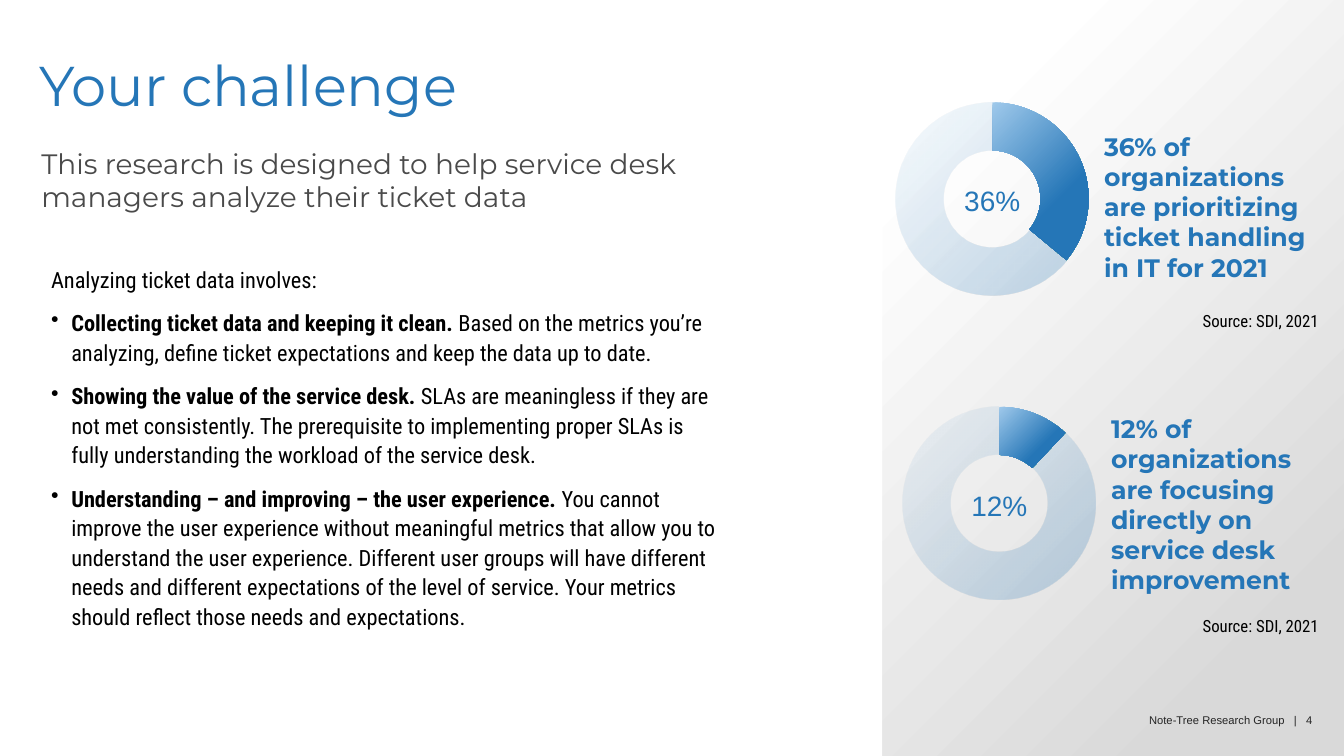
from collections import namedtuple

from lxml.etree import SubElement
from pptx import Presentation
from pptx.chart.data import CategoryChartData
from pptx.dml.color import RGBColor
from pptx.enum.chart import XL_CHART_TYPE as ChartType
from pptx.enum.shapes import MSO_SHAPE as Shape
from pptx.enum.text import MSO_ANCHOR as Anchor, PP_ALIGN as Align
from pptx.oxml import parse_xml
from pptx.oxml.ns import nsdecls, qn
from pptx.util import Inches, Pt

WIDTH, HEIGHT = Inches(13.34), Inches(7.5)
COLUMN, ROW = WIDTH / 100, HEIGHT / 100

BLUE = RGBColor(0x25, 0x76, 0xB7)
LIGHT_BLUE = RGBColor(0x9F, 0xC9, 0xEB)
SLATE = RGBColor(0x4A, 0x4A, 0x4A)
CHARCOAL = RGBColor(0x24, 0x24, 0x24)
BLACK = RGBColor(0, 0, 0)
WHITE = RGBColor(0xFF, 0xFF, 0xFF)
GREY = RGBColor(0xD9, 0xD9, 0xD9)

HEADING, BODY, PLAIN = "Montserrat", "Roboto Condensed", "Arial"

Box = namedtuple("Box", "left top width height")

TASKS = [
    ("Collecting ticket data and keeping it clean. ",
     "Based on the metrics you’re analyzing, define ticket expectations and "
     "keep the data up to date."),
    ("Showing the value of the service desk. ",
     "SLAs are meaningless if they are not met consistently. The prerequisite to "
     "implementing proper SLAs is fully understanding the workload of the service desk."),
    ("Understanding – and improving – the user experience. ",
     "You cannot improve the user experience without meaningful metrics that allow you "
     "to understand the user experience. Different user groups will have different needs "
     "and different expectations of the level of service. Your metrics should reflect "
     "those needs and expectations."),
]

STATS = [
    (Box(65.67, 10.4, 33.21, 34), 36, 1.2,
     "36% of organizations are prioritizing ticket handling in IT for 2021"),
    (Box(66.19, 50.67, 32.69, 34), 12, 0.27,
     "12% of organizations are focusing directly on service desk improvement"),
]


def place(box):
    """Turn a box in grid columns and rows into slide lengths."""
    return (round(box.left * COLUMN), round(box.top * ROW),
            round(box.width * COLUMN), round(box.height * ROW))


def add_frame(page, box, inset=0, anchor=Anchor.TOP):
    """Add a wrapping text box and return its text frame."""
    frame = page.shapes.add_textbox(*place(box)).text_frame
    frame.word_wrap = True
    frame.vertical_anchor = anchor
    frame.margin_left = frame.margin_right = Inches(inset)
    frame.margin_top = frame.margin_bottom = 0
    return frame


def style(para, name, size, color, bold=None, align=Align.LEFT, spacing=None):
    """Set the font, alignment and line spacing of a paragraph."""
    para.alignment = align
    para.line_spacing = spacing
    font = para.font
    font.name, font.size, font.bold = name, Pt(size), bold
    font.color.rgb = color


def add_line(page, box, text, *look, inset=0, anchor=Anchor.TOP, **options):
    """Add a text box with one styled paragraph."""
    para = add_frame(page, box, inset, anchor).paragraphs[0]
    para.text = text
    style(para, *look, **options)


def fill_gradient(fill, *stops):
    """Fill with a two-stop gradient from top left to bottom right."""
    fill.gradient()
    fill.gradient_angle = 315
    for stop, (position, color) in zip(fill.gradient_stops, stops):
        stop.position = position
        stop.color.rgb = color


def add_panel(page, box):
    """Draw the shaded panel behind the statistics."""
    panel = page.shapes.add_shape(Shape.RECTANGLE, *place(box))
    panel.shadow.inherit = False
    panel.line.fill.background()
    fill_gradient(panel.fill, (0.15, WHITE), (0.85, GREY))


def add_heading(page, box):
    """Write the title and the subtitle below it."""
    add_line(page, Box(box.left, box.top, 39.73, 10), "Your challenge",
             HEADING, 40, BLUE, spacing=0.9)
    add_line(page, Box(box.left + 0.15, box.top + 11.6, box.width, 9.6),
             "This research is designed to help service desk managers analyze "
             "their ticket data", HEADING, 20, SLATE, spacing=Pt(24))


def add_tasks(page, box):
    """Write the introduction and its bulleted list."""
    frame = add_frame(page, box, inset=0.1)
    intro = frame.paragraphs[0]
    intro.text = "Analyzing ticket data involves:"
    style(intro, BODY, 16, BLACK, spacing=1.1)
    for lead, detail in TASKS:
        para = frame.add_paragraph()
        for text, bold in ((lead, True), (detail, False)):
            span = para.add_run()
            span.text, span.font.bold = text, bold
        properties = para._p.get_or_add_pPr()
        properties.set("marL", str(Inches(0.2)))
        properties.set("indent", str(-Inches(0.2)))
        SubElement(properties, qn("a:buChar"), char="•")
        style(para, BODY, 16, BLACK, spacing=1.1)
        para.space_before = Pt(10)


def add_ring(page, box, percent):
    """Draw a doughnut chart of a share and its remainder."""
    data = CategoryChartData()
    data.categories = ["1", "2"]
    data.add_series("Series 1", (percent, 100 - percent))
    chart = page.shapes.add_chart(ChartType.DOUGHNUT, *place(box), data).chart
    chart.has_legend = chart.has_title = False
    chart.font.name, chart.font.size = BODY, Pt(10)
    chart.font.color.rgb = SLATE
    plot = chart.plots[0]
    plot.has_data_labels = False
    points = plot.series[0].points
    fill_gradient(points[0].format.fill, (0, LIGHT_BLUE), (0.65, BLUE))
    fill_gradient(points[1].format.fill, (0, BLUE), (0.99, BLUE))
    for point in (points[0], points[1]):
        point.format.line.fill.background()
    space = chart._chartSpace
    for color, alpha in zip(space.xpath(".//c:dPt[2]//a:gs/a:srgbClr"), (3, 26)):
        SubElement(color, qn("a:alpha"), val=str(alpha * 1000))
    space.xpath(".//c:holeSize")[0].set("val", "60")
    area = space.xpath(".//c:plotArea")[0]
    for layout in area.findall(qn("c:layout")):
        area.remove(layout)
    parts = (("x", 0.06), ("y", 0.1), ("w", 0.88), ("h", 0.81))
    sizes = "".join(f'<c:{side} val="{share}"/>' for side, share in parts)
    area.insert(0, parse_xml(
        f'<c:layout {nsdecls("c")}><c:manualLayout><c:layoutTarget val="inner"/>'
        f'<c:xMode val="edge"/><c:yMode val="edge"/>{sizes}</c:manualLayout></c:layout>'))


def add_stat(page, box, percent, shift, claim):
    """Place a ring with its percentage, claim and source."""
    ring = Box(box.left, box.top, 16.34, 31.47)
    add_ring(page, ring, percent)
    add_line(page, Box(box.left + 2.32, box.top + 13.93, 11.69, 4.53), f"{percent}%",
             PLAIN, 20, BLUE, align=Align.CENTER)
    add_line(page, Box(box.left + 15.74, box.top + shift, 16.87, ring.height), claim,
             HEADING, 18, BLUE, bold=True, inset=0.1, anchor=Anchor.MIDDLE)
    add_line(page, Box(box.left + box.width - 13.57, box.top + box.height - 4.13, 13.57, 4.13),
             "Source: SDI, 2021", BODY, 12, BLACK, align=Align.RIGHT, spacing=1.1,
             inset=0.1, anchor=Anchor.MIDDLE)


def add_footer(page, box):
    """Write the publisher and the page number."""
    add_line(page, box, "Note-Tree Research Group   |   4", PLAIN, 8, CHARCOAL,
             align=Align.RIGHT, spacing=1.1)


def main():
    """Build the slide and save the deck."""
    deck = Presentation()
    deck.slide_width, deck.slide_height = WIDTH, HEIGHT
    page = deck.slides.add_slide(deck.slide_layouts[6])
    add_panel(page, Box(65.67, 0, 34.33, 100))
    add_heading(page, Box(2.92, 7.73, 56.22, 21.2))
    add_tasks(page, Box(3.07, 34.8, 51.2, 54.4))
    for stat in STATS:
        add_stat(page, *stat)
    add_footer(page, Box(72.19, 94.13, 25.49, 1.87))
    deck.save("out.pptx")


if __name__ == "__main__":
    main()
